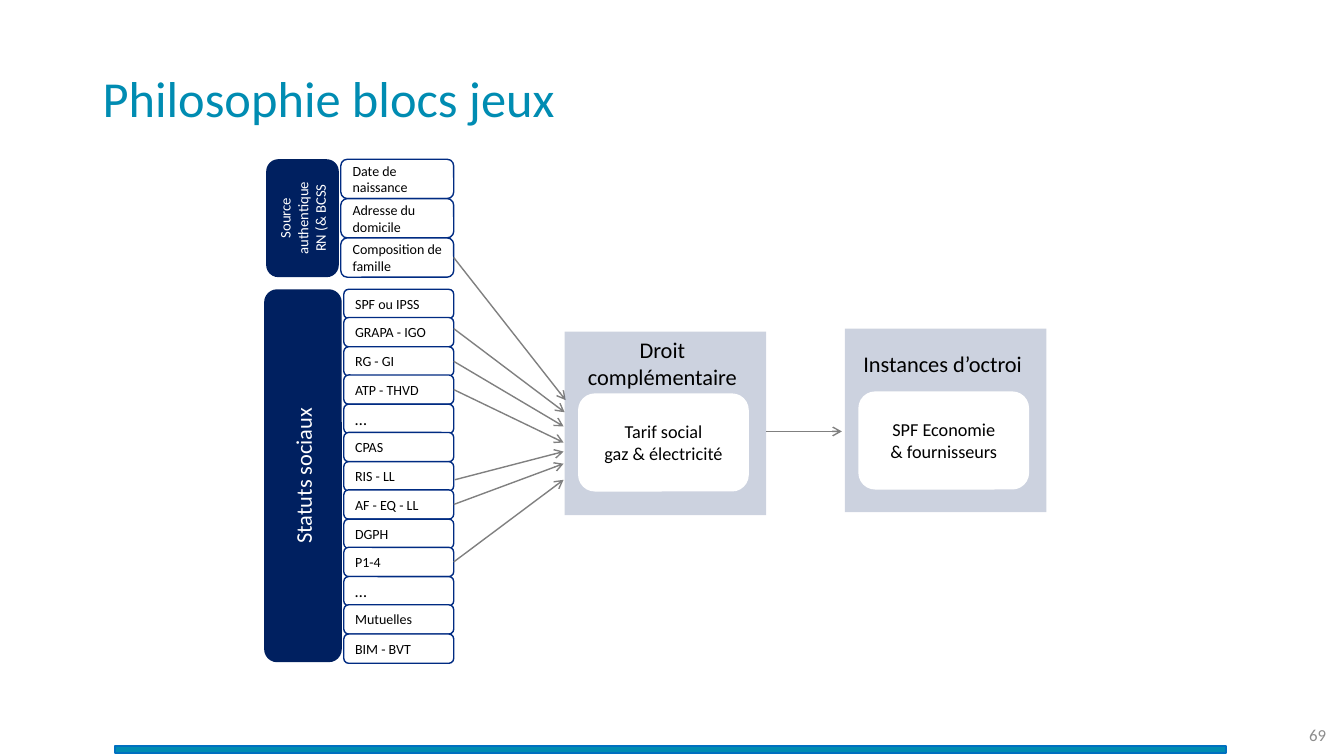
from lxml import etree
from pptx import Presentation
from pptx.dml.color import RGBColor
from pptx.enum.shapes import MSO_CONNECTOR, MSO_SHAPE
from pptx.enum.text import MSO_ANCHOR, PP_ALIGN
from pptx.oxml.ns import qn
from pptx.util import Pt

RECT, ROUND = MSO_SHAPE.RECTANGLE, MSO_SHAPE.ROUNDED_RECTANGLE
STRAIGHT = MSO_CONNECTOR.STRAIGHT
TOP, MIDDLE = MSO_ANCHOR.TOP, MSO_ANCHOR.MIDDLE
LEFT, CENTER, RIGHT = PP_ALIGN.LEFT, PP_ALIGN.CENTER, PP_ALIGN.RIGHT
WHITE = RGBColor(0xFF, 0xFF, 0xFF)
BLACK = RGBColor(0, 0, 0)
TEAL = RGBColor(0x00, 0x8C, 0xB2)
BLUE = RGBColor(0x00, 0x70, 0xC0)
NAVY = RGBColor(0x00, 0x20, 0x60)
OUTLINE = RGBColor(0x00, 0x2B, 0x82)
ARROW_GREY = RGBColor(0x80, 0x80, 0x80)
NUMBER_GREY = RGBColor(0x8C, 0x8C, 0x8C)
PX = 9144

prs = Presentation()
prs.slide_width, prs.slide_height = 1333 * PX, 750 * PX
slide = prs.slides.add_slide(prs.slide_layouts[6])


def add_block(kind, box, fill, line=None):
    block = slide.shapes.add_shape(kind, *(v * PX for v in box))
    block.shadow.inherit = False
    block.fill.solid()
    block.fill.fore_color.rgb = fill
    if line is None:
        block.line.fill.background()
    else:
        block.line.color.rgb = line
        block.line.width = Pt(1)
    return block


def write(holder, lines, size, color, align=LEFT, anchor=MIDDLE):
    frame = holder.text_frame
    frame.word_wrap = True
    frame.vertical_anchor = anchor
    frame.text = "\n".join(lines)
    for paragraph in frame.paragraphs:
        paragraph.alignment = align
        paragraph.font.name = "Calibri"
        paragraph.font.size = Pt(size)
        paragraph.font.color.rgb = color
    return frame


number = slide.shapes.add_textbox(1243 * PX, 709 * PX, 82 * PX, 40 * PX)
write(number, ["69"], 12, NUMBER_GREY, RIGHT)
add_block(RECT, (114, 740, 1102, 7), TEAL, BLUE)
title = slide.shapes.add_textbox(92 * PX, 28 * PX, 1150 * PX, 145 * PX)
write(title, ["Philosophie blocs jeux"], 36, TEAL).paragraphs[0].line_spacing = 0.9

sources = ["Date de naissance", "Adresse du domicile", "Composition de famille"]
statuses = ["SPF ou IPSS", "GRAPA - IGO", "RG - GI", "ATP - THVD", "…", "CPAS",
            "RIS - LL", "AF - EQ - LL", "DGPH", "P1-4", "…", "Mutuelles", "BIM - BVT"]
rows = [(label, (338, 158 + 39 * i, 112, 39)) for i, label in enumerate(sources)]
rows += [(label, (341, 287 + 57 * i // 2, 109, 29)) for i, label in enumerate(statuses)]
blocks = {}
for label, box in rows:
    blocks[label] = add_block(ROUND, box, WHITE, OUTLINE)
    frame = write(blocks[label], [label], 12 if label == "…" else 10, BLACK)
    frame.margin_right = 5 * PX

arrows = [
    ("Composition de famille", (450, 255), (561, 397)),
    (None, (450, 326), (560, 409)),
    ("RG - GI", (450, 357), (559, 423)),
    ("ATP - THVD", (450, 387), (559, 439)),
    (None, (451, 476), (559, 448)),
    ("AF - EQ - LL", (452, 501), (559, 460)),
    ("P1-4", (452, 556), (559, 476)),
    (None, (760, 428), (835, 428)),
]
for origin, start, end in arrows:
    arrow = slide.shapes.add_connector(STRAIGHT, *(v * PX for v in start + end))
    if origin:
        arrow.begin_connect(blocks[origin], 3)
    arrow.line.color.rgb = ARROW_GREY
    arrow.line.width = Pt(1)
    etree.SubElement(arrow.line._get_or_add_ln(), qn("a:tailEnd"), type="arrow")
    etree.SubElement(arrow._element.spPr, qn("a:effectLst"))

categories = [
    ((262, 287, 77, 370), ["Statuts sociaux"], 16),
    ((264, 158, 72, 117), ["Source authentique", "RN (& BCSS"], 10.5),
]
for box, lines, size in categories:
    category = add_block(ROUND, box, NAVY)
    frame = write(category, lines, size, WHITE, CENTER)
    frame._txBody.bodyPr.set("vert", "vert270")

panels = [
    ((838, 326), (835, 342, 200, 37), "Instances d’octroi",
     (852, 389), ["SPF Economie", "& fournisseurs"]),
    ((560, 329), (557, 329, 200, 64), "Droit complémentaire",
     (574, 391), ["Tarif social", "gaz & électricité"]),
]
for corner, heading_box, heading, card_corner, lines in panels:
    panel = add_block(RECT, corner + (200, 182), NAVY)
    navy_fill = panel._element.spPr.find(qn("a:solidFill"))
    etree.SubElement(navy_fill[0], qn("a:alpha"), val="20000")
    caption = slide.shapes.add_textbox(*(v * PX for v in heading_box))
    write(caption, [heading], 16, BLACK, CENTER, TOP)
    card = add_block(ROUND, card_corner + (168, 96), WHITE, WHITE)
    write(card, lines, 13, BLACK, CENTER)

prs.save("out.pptx")
